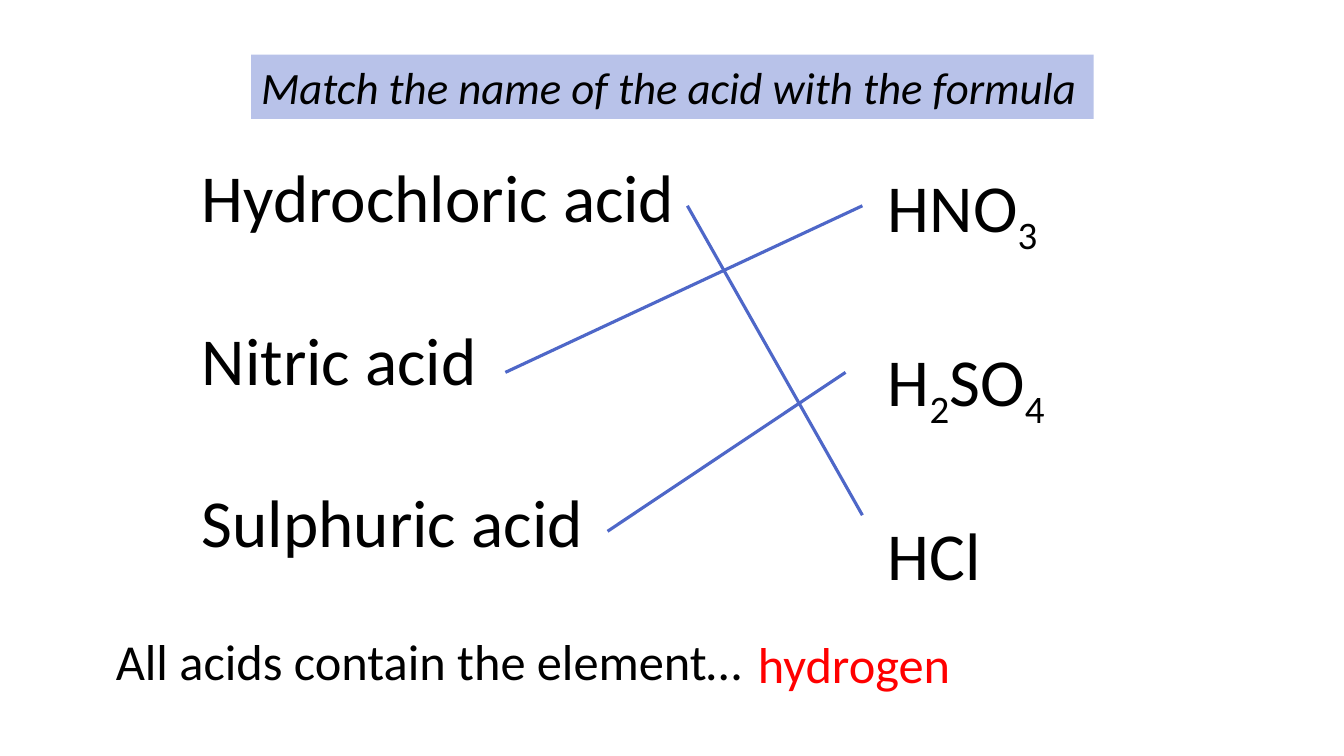
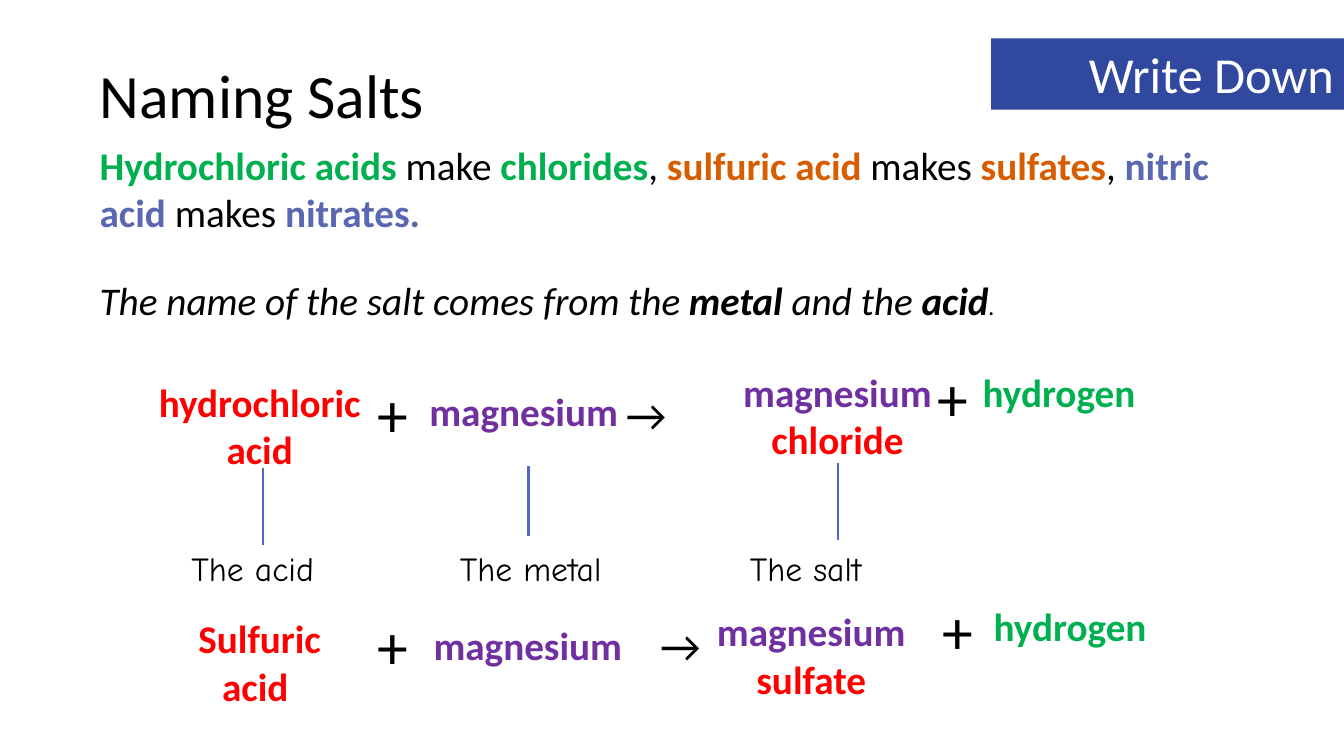
import itertools

import pptx
import pptx.dml.color
import pptx.enum.shapes
import pptx.enum.text
import pptx.oxml.ns
import pptx.util
from lxml import etree

Pt = pptx.util.Pt
ALIGN = pptx.enum.text.PP_ALIGN
LEFT, MID, RIGHT = ALIGN.LEFT, ALIGN.CENTER, ALIGN.RIGHT
FONT, HAND = "Calibri", "Comic Neue"
HEX = {
    "black": "000000", "white": "FFFFFF", "red": "FF0000",
    "green": "00B050", "purple": "7030A0", "orange": "D85C00",
    "slate": "5968B0", "line": "4E67C8", "pale": "B8C2E9",
    "navy": "31489F",
}


def rgb(name):
    return pptx.dml.color.RGBColor.from_string(HEX[name])


def write(shape, paras, size, align=LEFT, gap=0, font=FONT):
    """Fill a shape with paragraphs of (text, colour, style) runs.

    Style letters: b bold, i italic, s subscript, t tiny (18 pt).
    """
    frame = shape.text_frame
    frame.word_wrap = True
    frame.auto_size = pptx.enum.text.MSO_AUTO_SIZE.NONE
    frame.vertical_anchor = pptx.enum.text.MSO_ANCHOR.TOP
    for num, runs in enumerate(paras):
        para = frame.add_paragraph() if num else frame.paragraphs[0]
        if shape.is_placeholder:
            props = para._p.get_or_add_pPr()
            props.set("marL", "0")
            props.set("indent", "0")
            etree.SubElement(props, pptx.oxml.ns.qn("a:buNone"))
        para.alignment = align
        para.line_spacing = 1.0
        para.space_before = Pt(gap if num else 0)
        for text, hue, style in runs:
            run = para.add_run()
            run.text = text
            run.font.name = font
            run.font.size = Pt(18 if "t" in style else size)
            run.font.bold = "b" in style
            run.font.italic = "i" in style
            run.font.color.rgb = rgb(hue)
            if "s" in style:
                run._r.get_or_add_rPr().set("baseline", "-25000")


def place(shape, box):
    shape.left, shape.top, shape.width, shape.height = map(Pt, box)
    return shape


def paint(shape, hue):
    shape.fill.solid()
    shape.fill.fore_color.rgb = rgb(hue)


def label(slide, box, text, size, hue="black", font=FONT):
    area = slide.shapes.add_textbox(*map(Pt, box))
    write(area, [[(text, hue, "")]], size, font=font)


def link(slide, ends, width):
    kind = pptx.enum.shapes.MSO_CONNECTOR.STRAIGHT
    line = slide.shapes.add_connector(kind, *map(Pt, ends))
    line.line.color.rgb = rgb("line")
    line.line.width = Pt(width)
    etree.SubElement(line._element.spPr, pptx.oxml.ns.qn("a:effectLst"))


def formula(text):
    """Split a formula into runs, with its digits as subscripts."""
    return [("".join(part), "black", "s" if low else "")
            for low, part in itertools.groupby(text, str.isdigit)]


def match(deck):
    slide = deck.slides.add_slide(deck.slide_layouts[3])
    title, names, signs = slide.placeholders
    place(title, (179.3, 39, 602, 46))
    paint(title, "pale")
    task = "Match the name of the acid with the formula"
    write(title, [[(task, "black", "i")]], 32)

    acids = ["Hydrochloric acid", "Nitric acid", "Sulphuric acid"]
    place(names, (137, 107.3, 360, 298))
    write(names, [[(acid, "black", "")] for acid in acids], 48, gap=58.6)
    place(signs, (627, 114.5, 306, 298))
    write(signs, [formula(sign) for sign in ("HNO3", "H2SO4", "HCl")],
          48, gap=58.6)

    for ends in ((491, 147, 616, 368), (361, 266, 616, 147),
                 (434, 379.5, 604, 266)):
        link(slide, ends, 2.25)
    label(slide, (75.6, 446.4, 771, 51), "All acids contain the element…", 36)
    label(slide, (534.2, 448.6, 322, 51), "hydrogen", 36, "red")


# role: size, alignment, width, style
ROLES = {
    "acid": (28, MID, 178, "b"),
    "metal": (28, MID, 182, "b"),
    "salt": (28, MID, 210, "b"),
    "gas": (28, LEFT, 148, "b"),
    "plus": (44, LEFT, 40, ""),
    "arrow": (32, LEFT, 45, ""),
}


def react(slide, left, top, terms):
    """Write a word equation; each term is role, x, y and its lines."""
    for role, x, y, *lines in terms:
        size, align, width, style = ROLES[role]
        area = slide.shapes.add_textbox(
            Pt(left + x), Pt(top + y), Pt(width),
            Pt(size * 1.22 * len(lines) + 7.2))
        write(area, [[(text, hue, style)] for text, hue in lines],
              size, align)


def callout(slide, x, top, end, left, text):
    """Draw a line down from a term to its label."""
    link(slide, (x, top, x, end), 1.5)
    label(slide, (left, 388, 153, 36), text, 24, font=HAND)


def badge(slide, box, text):
    shape = slide.shapes.add_shape(
        pptx.enum.shapes.MSO_SHAPE.RECTANGLE, *map(Pt, box))
    shape.shadow.inherit = False
    paint(shape, "navy")
    shape.line.fill.background()
    write(shape, [[(text, "white", "")]], 36, RIGHT)


def salts(deck):
    slide = deck.slides.add_slide(deck.slide_layouts[1])
    title, body = slide.placeholders
    place(title, (64, 37.4, 499, 60.5))
    write(title, [[("Naming Salts", "black", "")]], 44)

    place(body, (64, 97.2, 853, 140))
    rules = [
        ("Hydrochloric acids ", "green", "b"), ("make ", "black", ""),
        ("chlorides", "green", "b"), (", ", "black", ""),
        ("sulfuric acid ", "orange", "b"), ("makes ", "black", ""),
        ("sulfates", "orange", "b"), (", ", "black", ""),
        ("nitric acid", "slate", "b"), (" makes ", "black", ""),
        ("nitrates.", "slate", "b"),
    ]
    note = [
        ("The name of the salt comes from the ", "black", "i"),
        ("metal", "black", "bi"), (" and the ", "black", "i"),
        ("acid", "black", "bi"), (".", "black", "it"),
    ]
    write(body, [rules, note], 28, gap=29.5)

    plus, arrow = ("+", "black"), ("→", "black")
    metal, gas = ("magnesium", "purple"), ("hydrogen", "green")
    react(slide, 96.5, 253.5, [
        ("acid", 0, 13, ("hydrochloric acid", "red")),
        ("plus", 166.3, 11.5, plus),
        ("metal", 186.5, 19.5, metal),
        ("arrow", 343.5, 19.5, arrow),
        ("salt", 396.7, 6, metal, ("chloride", "red")),
        ("plus", 566, 0, plus),
        ("gas", 598.3, 6, gas),
    ])
    react(slide, 96.5, 420, [
        ("acid", 0, 15.6, ("Sulfuric", "red"), ("acid ", "red")),
        ("plus", 166.3, 10.6, plus),
        ("metal", 189.5, 20, metal),
        ("arrow", 368, 18, arrow),
        ("salt", 378, 10.6, metal, ("sulfate", "red")),
        ("plus", 569.5, 0, plus),
        ("gas", 606.2, 7, gas),
    ])
    callout(slide, 188, 334, 389, 129.6, "The acid")
    callout(slide, 377.5, 333, 383, 321.4, "The metal")
    callout(slide, 598.5, 330.5, 386, 528.5, "The salt")
    badge(slide, (708, 27.4, 252, 51), "Write Down")


def main():
    deck = pptx.Presentation()
    deck.slide_width, deck.slide_height = Pt(960), Pt(540)
    match(deck)
    salts(deck)
    deck.save("out.pptx")


if __name__ == "__main__":
    main()
